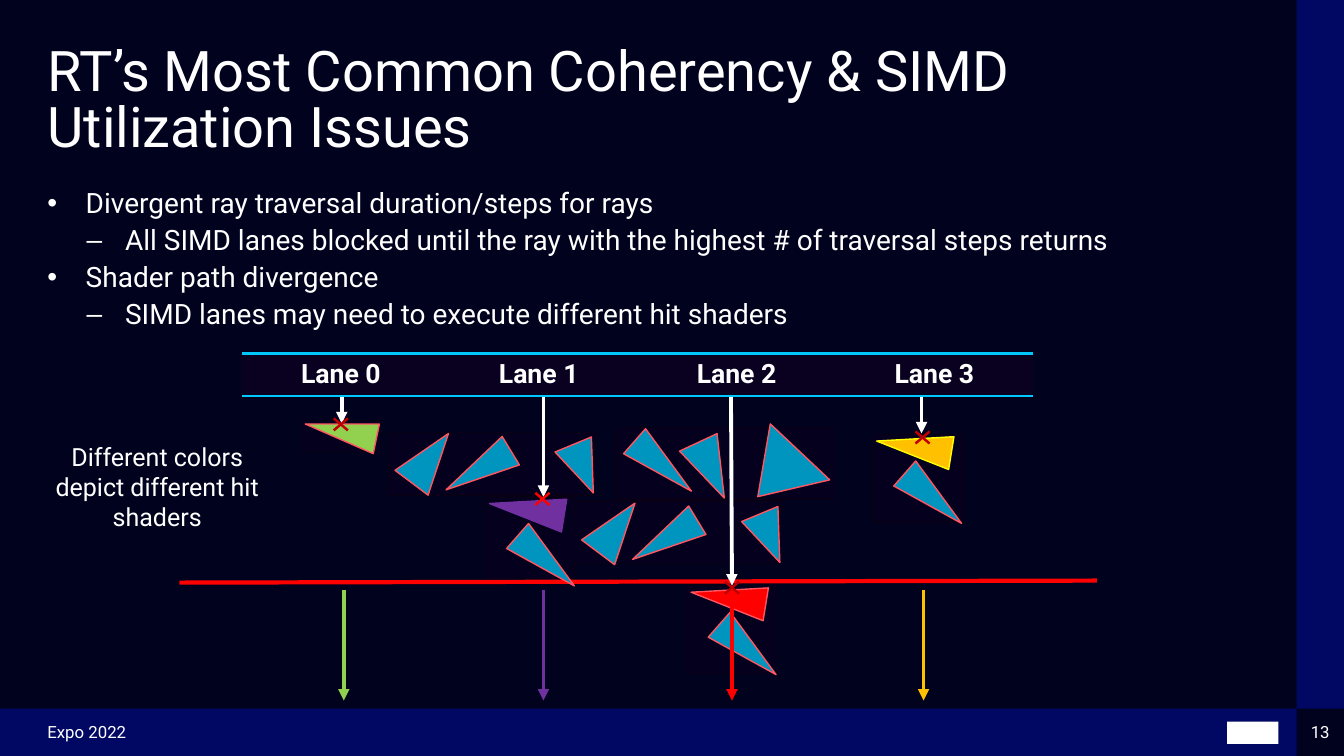
from lxml.etree import SubElement
from pptx import Presentation
from pptx.dml.color import RGBColor
from pptx.enum.shapes import MSO_CONNECTOR, MSO_SHAPE
from pptx.enum.text import MSO_ANCHOR, MSO_AUTO_SIZE, PP_ALIGN
from pptx.oxml.ns import qn
from pptx.util import Inches, Pt

COLORS = {
    "background": "00021E", "band": "000864", "white": "FFFFFF", "panel": "0A001F",
    "panel_edge": "070017", "cyan": "00C7FD", "blue": "0095BE", "pink": "FF5661",
    "red": "FF0000", "dark_red": "C00000", "green": "92D050", "purple": "7030A0",
    "amber": "FFC000", "yellow": "FFFF00",
}

LANES = [
    dict(entry=(1.89, 1.89), stop=0.7, triangle=(1.73, 0.42, 0.3, 0.72, 281.8),
         fill="green", edge="pink", cross=(1.88, 0.71), cross_color="dark_red", leave=1.91),
    dict(entry=(3.89, 3.89), stop=1.43, triangle=(3.56, 1.18, 0.33, 0.75, 279.2),
         fill="purple", edge="purple", cross=(3.88, 1.45), cross_color="red", leave=3.89),
    dict(entry=(5.75, 5.76), stop=2.31, triangle=(5.56, 2.06, 0.33, 0.75, 279.2),
         fill="red", edge="pink", cross=(5.76, 2.33), cross_color="dark_red", leave=5.76),
    dict(entry=(7.64, 7.64), stop=0.8, triangle=(7.4, 0.56, 0.33, 0.75, 279.2),
         fill="amber", edge="yellow", cross=(7.65, 0.84), cross_color="dark_red", leave=7.66),
]
PANELS = [(4.21, 1.47, 2.04, 0.62), (1.49, 0.67, 0.78, 0.31), (2.36, 0.79, 2.04, 0.62),
          (3.32, 1.43, 0.89, 0.81), (4.61, 0.74, 2.16, 0.71), (5.31, 2.31, 0.89, 0.87),
          (7.16, 0.81, 0.89, 0.87)]
CLUSTER = [(2.56, 0.74, 0.41, 0.61, 36.9), (3.08, 0.79, 0.33, 0.75, 238.8),
           (4.09, 0.89, 0.39, 0.52, 157.5)]
CLUSTER_SHIFTS = [(0, 0), (1.85, 0.69)]
SINGLE_TRIANGLES = [(5.35, 0.86, 0.41, 0.61, 155), (5.82, 0.9, 0.81, 0.61, 223.3)]
SLIVERS = [(4.91, 0.75), (3.75, 1.69), (5.75, 2.57), (7.59, 1.07)]


def rgb(name):
    """Return the named colour."""
    return RGBColor.from_string(COLORS[name])


def write(paragraph, text, size=20, bold=False, align=PP_ALIGN.LEFT, spacing=1.0):
    """Put formatted text into a paragraph."""
    paragraph.alignment = align
    paragraph.line_spacing = spacing
    paragraph.space_before = paragraph.space_after = Pt(0)
    run = paragraph.add_run()
    run.text = text
    run.font.name = "Roboto"
    run.font.size = Pt(size)
    run.font.bold = bold
    run.font.color.rgb = rgb("white")


def prepare(frame, anchor=MSO_ANCHOR.TOP, wrap=True):
    """Set up a text frame without margins."""
    frame.auto_size = MSO_AUTO_SIZE.NONE
    frame.word_wrap = wrap
    frame.vertical_anchor = anchor
    frame.margin_left = frame.margin_right = frame.margin_top = frame.margin_bottom = 0
    return frame


def place(placeholder, box):
    """Move a placeholder to a box and return its frame."""
    placeholder.left, placeholder.top, placeholder.width, placeholder.height = map(Inches, box)
    return prepare(placeholder.text_frame)


def add_label(slide, box, lines, wrap=True, anchor=MSO_ANCHOR.MIDDLE, **style):
    """Add a text box with one paragraph per line."""
    frame = prepare(slide.shapes.add_textbox(*map(Inches, box)).text_frame, anchor, wrap)
    for index, line in enumerate(lines):
        write(frame.add_paragraph() if index else frame.paragraphs[0], line, **style)


def add_filled(slide, kind, box, fill, edge=None, rotation=0, opacity=None):
    """Add a flat preset shape."""
    shape = slide.shapes.add_shape(kind, *map(Inches, box))
    shape.shadow.inherit = False
    shape.rotation = rotation
    shape.fill.solid()
    shape.fill.fore_color.rgb = rgb(fill)
    if opacity is not None:
        color = shape.fill._xPr.find(qn("a:solidFill"))[0]
        SubElement(color, qn("a:alpha"), val=str(opacity * 1000))
    if edge:
        shape.line.color.rgb = rgb(edge)
        shape.line.width = Pt(1)
    else:
        shape.line.fill.background()


def add_line(slide, start, end, color, width, arrow=False):
    """Add a straight line, with an arrowhead at its end if asked."""
    line = slide.shapes.add_connector(MSO_CONNECTOR.STRAIGHT, *map(Inches, start + end))
    line.line.color.rgb = rgb(color)
    line.line.width = Pt(width)
    if arrow:
        SubElement(line.line._get_or_add_ln(), qn("a:tailEnd"), type="triangle")
    SubElement(line._element.spPr, qn("a:effectLst"))


def add_frame(slide, width, height, band=0.47):
    """Draw the bottom and right bands, footer and page number."""
    right, bottom = width - band, height - band
    add_filled(slide, MSO_SHAPE.RECTANGLE, (0, bottom, right, band), "band")
    add_filled(slide, MSO_SHAPE.RECTANGLE, (right, 0, band, bottom), "band")
    add_filled(slide, MSO_SHAPE.RECTANGLE, (right - 0.69, bottom + 0.13, 0.51, 0.22), "white")
    add_label(slide, (band, bottom, 3.52, band), ["Expo 2022"], size=12)
    add_label(slide, (right, bottom, band, band), ["13"], size=12, align=PP_ALIGN.CENTER)


def add_title(slide, box):
    """Fill the title placeholder."""
    frame = place(slide.shapes.title, box)
    write(frame.paragraphs[0], "RT’s Most Common Coherency & SIMD Utilization Issues",
          size=40, spacing=0.83)


def add_bullets(slide, box):
    """Fill the body placeholder with two levels of bullets."""
    frame = place(slide.placeholders[1], box)
    points = [
        (0, "Divergent ray traversal duration/steps for rays"),
        (1, "All SIMD lanes blocked until the ray with the highest # of traversal steps returns"),
        (0, "Shader path divergence"),
        (1, "SIMD lanes may need to execute different hit shaders"),
    ]
    for index, (level, text) in enumerate(points):
        paragraph = frame.add_paragraph() if index else frame.paragraphs[0]
        paragraph.level = level
        write(paragraph, text, spacing=1.1)
        properties = paragraph._p.get_or_add_pPr()
        properties.set("marL", str(Inches((0.38, 0.77)[level])))
        properties.set("indent", str(-Inches(0.38)))
        SubElement(properties, qn("a:buChar"), char="•–"[level])


def add_lane_table(slide, box):
    """Add the one-row table of lanes, ruled above and below."""
    table = slide.shapes.add_table(1, len(LANES), *map(Inches, box)).table
    table.first_row = table.horz_banding = False
    for index, cell in enumerate(table.rows[0].cells):
        write(cell.text_frame.paragraphs[0], f"Lane {index}", size=19, bold=True,
              align=PP_ALIGN.CENTER)
        properties = cell._tc.get_or_add_tcPr()
        for side in ("lnL", "lnR"):
            SubElement(SubElement(properties, qn(f"a:{side}")), qn("a:noFill"))
        for side in ("lnT", "lnB"):
            border = SubElement(properties, qn(f"a:{side}"), w=str(Pt(2.25)))
            SubElement(SubElement(border, qn("a:solidFill")), qn("a:srgbClr"), val=COLORS["cyan"])
        cell.fill.solid()
        cell.fill.fore_color.rgb = rgb("panel")


def add_diagram(slide, left, top):
    """Draw the rays, triangles and hit shaders from a corner point."""
    def at(x, y):
        return left + x, top + y

    def triangle(x, y, width, height, rotation, fill="blue", edge="pink"):
        add_filled(slide, MSO_SHAPE.ISOSCELES_TRIANGLE, at(x, y) + (width, height),
                   fill, edge, rotation)

    add_line(slide, at(0.28, 2.28), at(9.38, 2.26), "red", 3)
    for x, y, width, height in PANELS:
        add_filled(slide, MSO_SHAPE.RECTANGLE, at(x, y) + (width, height),
                   "panel", "panel_edge", opacity=50)
    for lane in LANES:
        triangle(*lane["triangle"], lane["fill"], lane["edge"])
        start, end = lane["entry"]
        add_line(slide, at(start, 0.44), at(end, lane["stop"]), "white", 2.75, arrow=True)
    for dx, dy in CLUSTER_SHIFTS:
        for x, y, *size in CLUSTER:
            triangle(x + dx, y + dy, *size)
    for single in SINGLE_TRIANGLES:
        triangle(*single)
    for x, y in SLIVERS:
        triangle(x, y, 0.33, 0.75, 131.3)
    for lane in LANES:
        add_line(slide, at(lane["leave"], 2.35), at(lane["leave"], 3.45), lane["fill"], 2.75,
                 arrow=True)
        x, y = lane["cross"]
        for slope in (1, -1):
            add_line(slide, at(x - 0.07, y - 0.06 * slope), at(x + 0.07, y + 0.06 * slope),
                     lane["cross_color"], 1.75)


def main():
    """Build and save the slide."""
    deck = Presentation()
    deck.slide_width, deck.slide_height = Inches(13.33), Inches(7.5)
    slide = deck.slides.add_slide(deck.slide_layouts[1])
    slide.background.fill.solid()
    slide.background.fill.fore_color.rgb = rgb("background")
    add_frame(slide, 13.33, 7.5)
    add_title(slide, (0.47, 0.47, 11.91, 1.34))
    add_bullets(slide, (0.47, 1.81, 11.91, 1.52))
    add_diagram(slide, 1.5, 3.5)
    add_label(slide, (0.39, 4.38, 2.34, 0.91),
              ["Different colors", "depict different hit", "shaders"],
              wrap=False, anchor=MSO_ANCHOR.TOP, size=17.9, align=PP_ALIGN.CENTER)
    add_lane_table(slide, (2.4, 3.51, 7.85, 0.42))
    deck.save("out.pptx")


if __name__ == "__main__":
    main()
